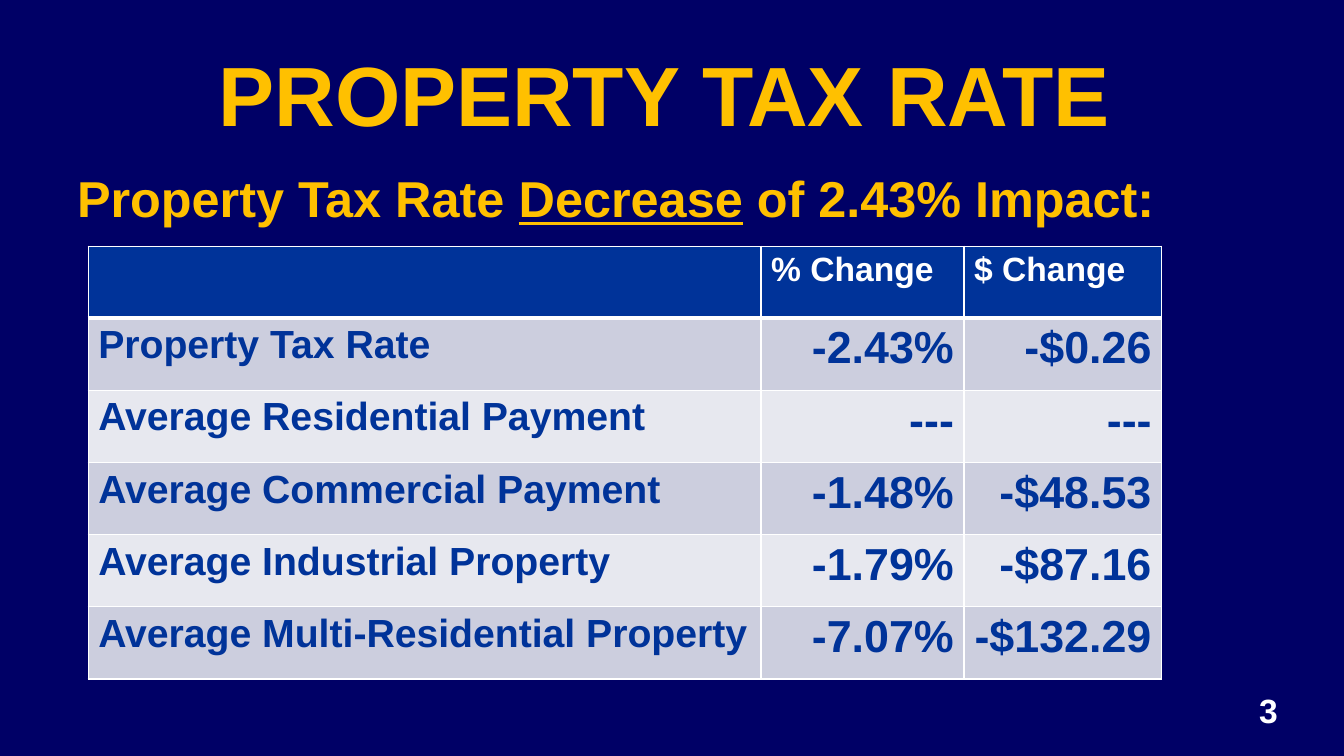
from lxml.etree import SubElement
from pptx import Presentation
from pptx.dml.color import RGBColor
from pptx.enum.text import MSO_ANCHOR, PP_ALIGN
from pptx.oxml.ns import qn
from pptx.util import Pt

COLORS = {
    "navy": "000066",
    "gold": "FFC000",
    "white": "FFFFFF",
    "blue": "003399",
    "dark_band": "CCCEDE",
    "light_band": "E7E8EF",
}
FONT = "Arial"

COLUMN_WIDTHS = [480.6, 145, 141.2]
ROW_HEIGHT = 51.55
RATE_ROWS = [
    ("", "% Change", "$ Change"),
    ("Property Tax Rate", "-2.43%", "-$0.26"),
    ("Average Residential Payment", "---", "---"),
    ("Average Commercial Payment", "-1.48%", "-$48.53"),
    ("Average Industrial Property", "-1.79%", "-$87.16"),
    ("Average Multi-Residential Property", "-7.07%", "-$132.29"),
]


def rgb(name):
    return RGBColor.from_string(COLORS[name])


class SlideBuilder:
    def __init__(self, s):
        self.s = s

    def background(self, color):
        fill = self.s.background.fill
        fill.solid()
        fill.fore_color.rgb = rgb(color)

    def add_run(self, p, text, size, color, underline=False):
        r = p.add_run()
        r.text = text
        r.font.name = FONT
        r.font.size = Pt(size)
        r.font.bold = True
        r.font.underline = underline
        r.font.color.rgb = rgb(color)

    def text(self, box, runs, size, color, align=PP_ALIGN.LEFT,
             anchor=MSO_ANCHOR.TOP):
        """Add a one-paragraph text box from (text, underline) runs."""
        tf = self.s.shapes.add_textbox(*map(Pt, box)).text_frame
        tf.word_wrap = True
        tf.vertical_anchor = anchor
        p = tf.paragraphs[0]
        p.alignment = align
        for text, underline in runs:
            self.add_run(p, text, size, color, underline)

    def borders(self, cell, top, bottom):
        """Draw white borders: 1 pt at the sides, given widths above and below."""
        tcPr = cell._tc.get_or_add_tcPr()
        for side, width in (("L", 1), ("R", 1), ("T", top), ("B", bottom)):
            ln = SubElement(tcPr, qn(f"a:ln{side}"), w=str(Pt(width)))
            fill = SubElement(ln, qn("a:solidFill"))
            SubElement(fill, qn("a:srgbClr"), val=COLORS["white"])

    def cell(self, cell, text, size, color, fill, align):
        cell.fill.solid()
        cell.fill.fore_color.rgb = rgb(fill)
        p = cell.text_frame.paragraphs[0]
        p.alignment = align
        if text:
            self.add_run(p, text, size, color)

    def table(self, left, top, rows, widths, row_height):
        table = self.s.shapes.add_table(
            len(rows), len(widths), Pt(left), Pt(top),
            Pt(sum(widths)), Pt(row_height * len(rows))).table
        for column, width in zip(table.columns, widths):
            column.width = Pt(width)
        for i, values in enumerate(rows):
            table.rows[i].height = Pt(row_height)
            band = "dark_band" if i % 2 else "light_band"
            for j, value in enumerate(values):
                cell = table.cell(i, j)
                self.borders(cell, 3 if i == 1 else 1, 3 if i == 0 else 1)
                if i == 0:
                    self.cell(cell, value, 24, "white", "blue", PP_ALIGN.LEFT)
                elif j == 0:
                    self.cell(cell, value, 28, "blue", band, PP_ALIGN.LEFT)
                else:
                    self.cell(cell, value, 32, "blue", band, PP_ALIGN.RIGHT)


def main():
    prs = Presentation()
    prs.slide_width, prs.slide_height = Pt(960), Pt(540)
    slide = SlideBuilder(prs.slides.add_slide(prs.slide_layouts[6]))
    slide.background("navy")
    slide.text((870, 489, 72, 36), [("3", False)], 24, "white", PP_ALIGN.CENTER)
    slide.text((48, 21.6, 853, 90), [("PROPERTY TAX RATE", False)], 60, "gold",
               PP_ALIGN.CENTER, MSO_ANCHOR.MIDDLE)
    slide.text((48, 116, 864, 61),
               [("Property Tax Rate ", False), ("Decrease", True),
                (" of 2.43% Impact:", False)], 36, "gold")
    slide.table(63, 175.8, RATE_ROWS, COLUMN_WIDTHS, ROW_HEIGHT)
    prs.save("out.pptx")


if __name__ == "__main__":
    main()
